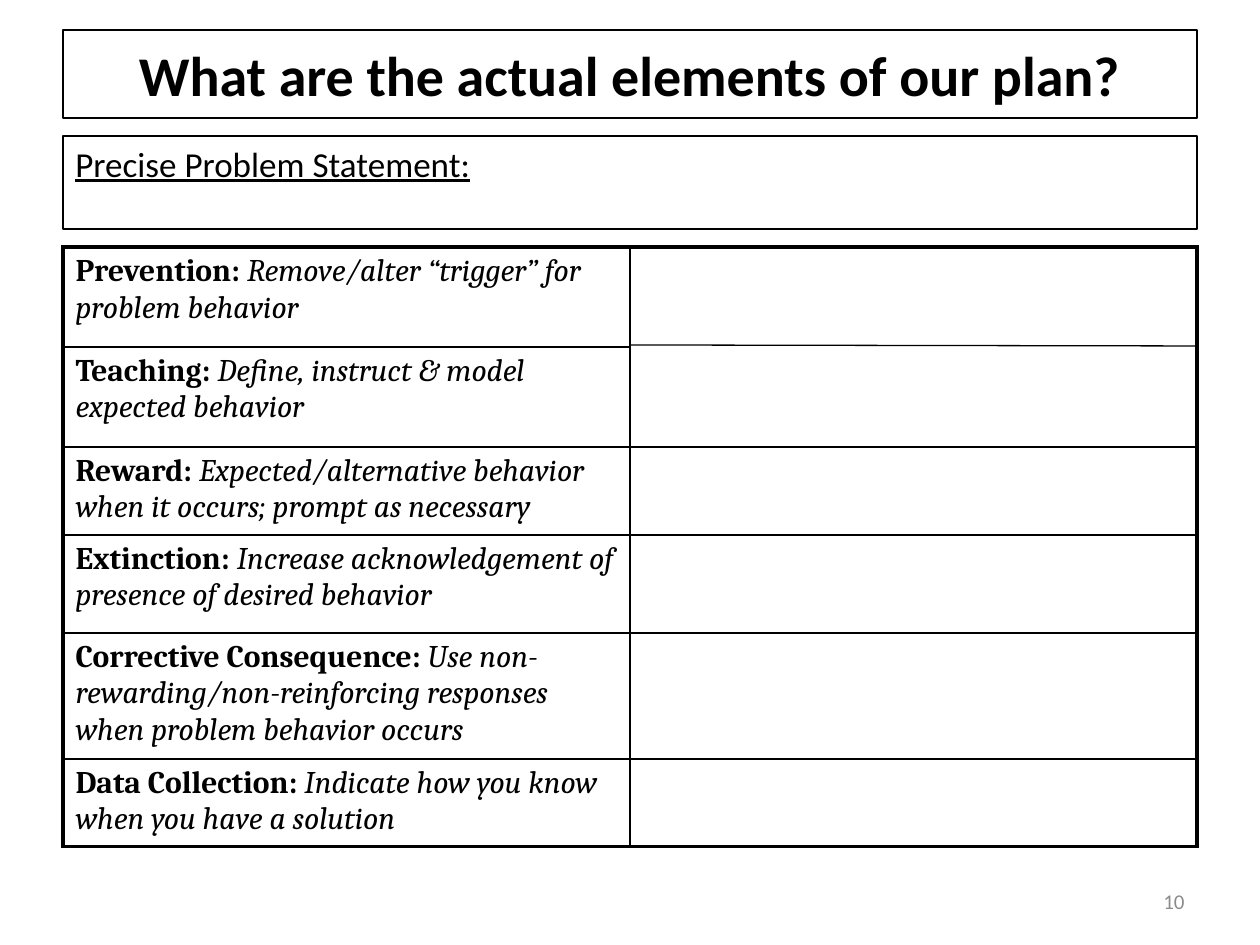
from lxml.etree import SubElement as Sub
from pptx import Presentation
from pptx.dml.color import RGBColor
from pptx.enum.shapes import MSO_CONNECTOR as Conn, MSO_SHAPE as Shape
from pptx.enum.text import MSO_ANCHOR as Anchor, MSO_AUTO_SIZE as Auto, PP_ALIGN as Align
from pptx.oxml import parse_xml
from pptx.oxml.ns import nsdecls, qn
from pptx.util import Emu, Pt

SCALE = 914400 / 126
BLACK = "000000"
GRAY = "8C8C8C"
THIN, MID, THICK = 0.75, 1, 2.25


def px(n):
    return Emu(round(n * SCALE))


def color(text):
    return RGBColor.from_string(text)


class Page:
    sans = "Calibri"
    serif = "Cambria"

    def __init__(self, deck):
        self.slide = deck.slides.add_slide(deck.slide_layouts[5])
        self.shapes = self.slide.shapes

    def font(self, run, face, size, tint=BLACK, bold=False, slant=False, under=False):
        font = run.font
        font.name, font.size = face, Pt(size)
        font.bold, font.italic, font.underline = bold, slant, under
        font.color.rgb = color(tint)

    def fill_text(self, shape, text, size, align, anchor, **style):
        frame = shape.text_frame
        frame.text = text
        frame.word_wrap = True
        frame.auto_size = Auto.NONE
        frame.vertical_anchor = anchor
        par = frame.paragraphs[0]
        par.alignment = align
        self.font(par.runs[0], self.sans, size, **style)

    def edge(self, shape):
        shape.line.color.rgb = color(BLACK)
        shape.line.width = Pt(THIN)

    def title(self, text, x, y, w, h):
        shape = self.shapes.title
        shape.left, shape.top, shape.width, shape.height = map(px, (x, y, w, h))
        self.edge(shape)
        self.fill_text(shape, text, 32, Align.CENTER, Anchor.MIDDLE, bold=True)

    def box(self, text, x, y, w, h):
        shape = self.shapes.add_shape(Shape.RECTANGLE, *map(px, (x, y, w, h)))
        shape.shadow.inherit = False
        shape.fill.background()
        self.edge(shape)
        self.fill_text(shape, text, 20, Align.LEFT, Anchor.TOP, under=True)

    def label(self, text, x, y, w, h):
        shape = self.shapes.add_textbox(*map(px, (x, y, w, h)))
        self.fill_text(shape, text, 12, Align.RIGHT, Anchor.MIDDLE, tint=GRAY)

    def line(self, *ends):
        line = self.shapes.add_connector(Conn.STRAIGHT, *map(px, ends))
        self.edge(line)
        Sub(line._element.spPr, qn("a:effectLst"))

    def border(self, cell, widths):
        props = cell._tc.get_or_add_tcPr()
        for i, (side, width) in enumerate(zip("LRTB", widths)):
            props.insert(i, parse_xml(
                f'<a:ln{side} {nsdecls("a")} w="{Pt(width)}"><a:solidFill>'
                f'<a:srgbClr val="{BLACK}"/></a:solidFill></a:ln{side}>'))

    def table(self, rows, x, y, w):
        high = sum(row[2] for row in rows)
        frame = self.shapes.add_table(len(rows), 2, *map(px, (x, y, w, high)))
        table = frame.table
        table.first_row = table.horz_banding = False
        last = len(rows) - 1
        for i, (head, body, tall) in enumerate(rows):
            table.rows[i].height = px(tall)
            for j in range(2):
                cell = table.cell(i, j)
                cell.fill.background()
                self.border(cell, (
                    MID if j else THICK, THICK if j else MID,
                    MID if i else THICK, THICK if i == last else MID))
            par = table.cell(i, 0).text_frame.paragraphs[0]
            par.text = head + ": "
            self.font(par.runs[0], self.serif, 18, bold=True)
            run = par.add_run()
            run.text = body
            self.font(run, self.serif, 18, slant=True)
        table.cell(0, 1).merge(table.cell(1, 1))


def main():
    deck = Presentation()
    deck.slide_width, deck.slide_height = px(1260), px(945)
    page = Page(deck)
    left, wide, top = 63, 1134, 247
    plan = [
        ("Prevention", "Remove/alter “trigger” for problem behavior", 100),
        ("Teaching", "Define, instruct & model expected behavior", 100),
        ("Reward", "Expected/alternative behavior when it occurs; prompt as necessary", 88),
        ("Extinction", "Increase acknowledgement of presence of desired behavior", 98),
        ("Corrective Consequence",
         "Use non-rewarding/non-reinforcing responses when problem behavior occurs", 126),
        ("Data Collection", "Indicate how you know when you have a solution", 88),
    ]
    page.title("What are the actual elements of our plan?", left, 30, wide, 88)
    page.table(plan, left, top, wide)
    page.line(left + wide // 2, 345, left + wide, 346)
    page.box("Precise Problem Statement:", left, 136, wide, 93)
    page.label("10", 903, 876, 294, 50)
    deck.save("out.pptx")


if __name__ == "__main__":
    main()
